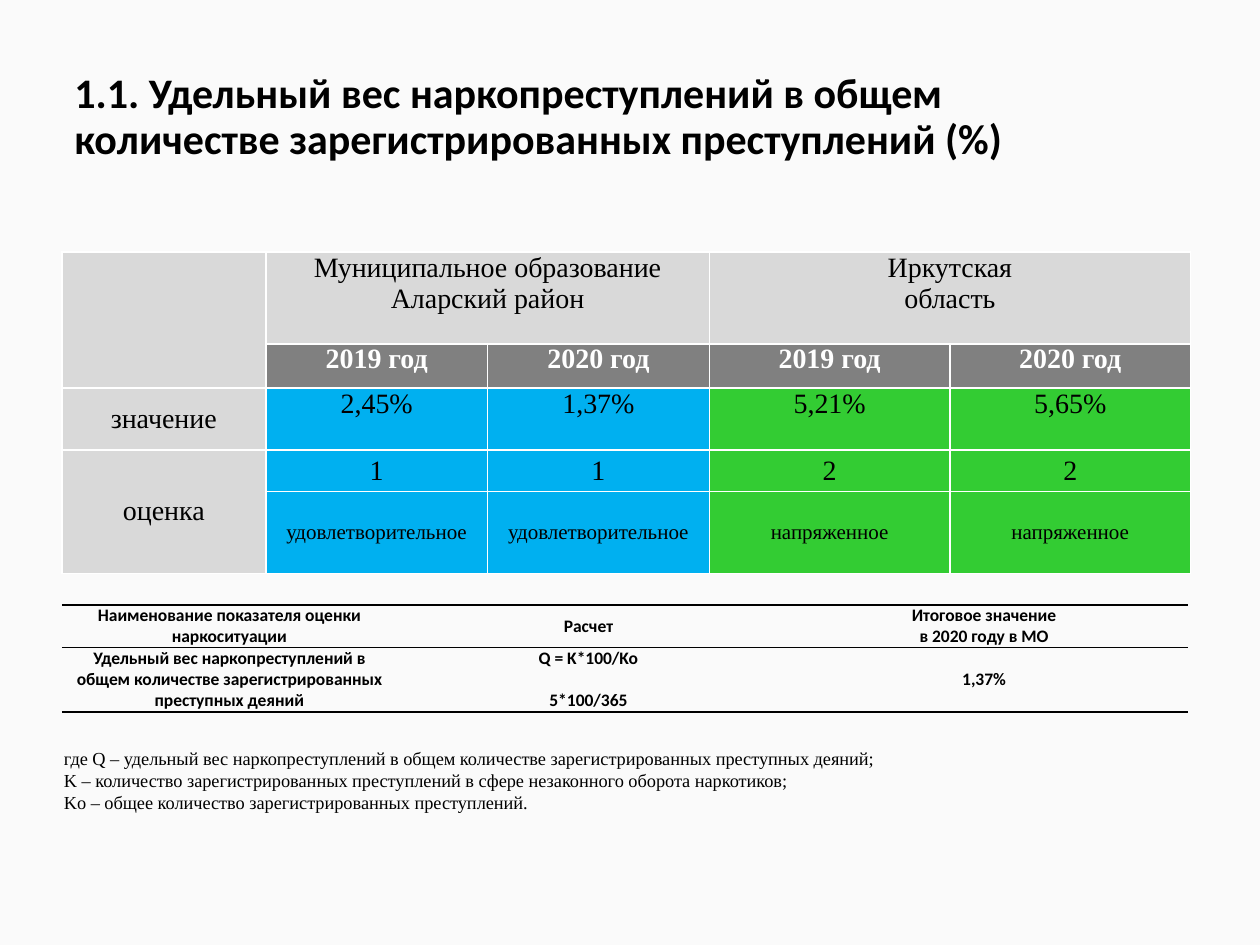
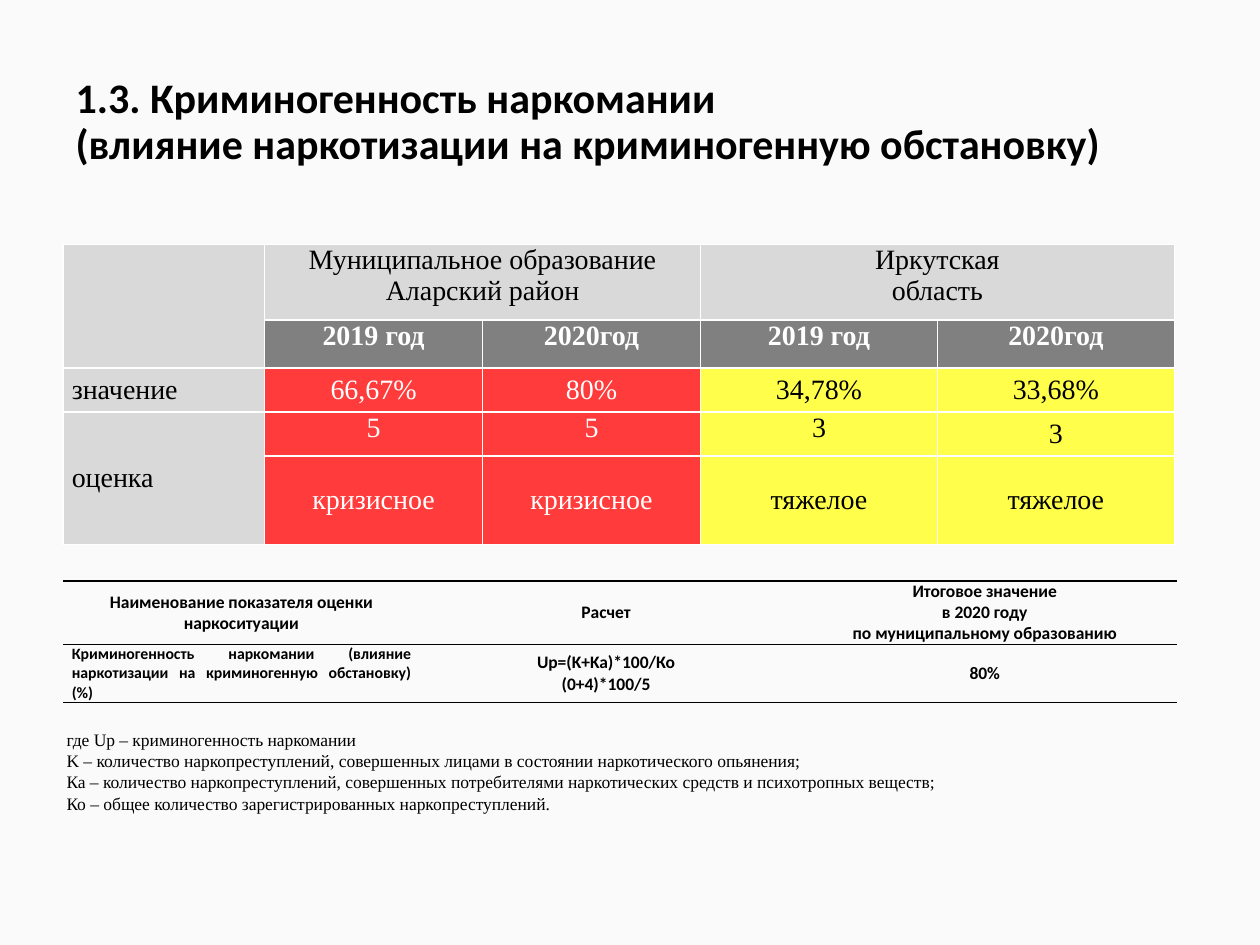
"""Build two slides that rate drug-crime indicators for a district and its region."""
from dataclasses import dataclass
from typing import NamedTuple

from lxml import etree
from pptx import Presentation
from pptx.dml.color import RGBColor
from pptx.enum.text import MSO_ANCHOR, MSO_AUTO_SIZE, PP_ALIGN
from pptx.oxml.ns import qn
from pptx.util import Inches, Pt

TOP, MIDDLE = MSO_ANCHOR.TOP, MSO_ANCHOR.MIDDLE
LEFT, CENTER, JUSTIFY = PP_ALIGN.LEFT, PP_ALIGN.CENTER, PP_ALIGN.JUSTIFY
NO_AUTOFIT = MSO_AUTO_SIZE.NONE
TITLE_ONLY = 5


@dataclass(frozen=True)
class Theme:
    """Shared colours, fonts and type sizes."""

    background: RGBColor = RGBColor(0xFA, 0xFA, 0xFA)
    black: RGBColor = RGBColor(0, 0, 0)
    white: RGBColor = RGBColor(0xFF, 0xFF, 0xFF)
    label: RGBColor = RGBColor(0xD9, 0xD9, 0xD9)
    year: RGBColor = RGBColor(0x80, 0x80, 0x80)
    satisfactory: RGBColor = RGBColor(0x00, 0xB0, 0xF0)
    tense: RGBColor = RGBColor(0x33, 0xCC, 0x33)
    severe: RGBColor = RGBColor(0xFF, 0xFF, 0x4B)
    crisis: RGBColor = RGBColor(0xFF, 0x3B, 0x3B)
    sans: str = "Calibri"
    serif: str = "Times New Roman"
    title_size: float = 24
    rating_size: float = 16
    formula_size: float = 10
    border: float = 1


THEME = Theme()


class Box(NamedTuple):
    """Position and size in inches."""

    left: float
    top: float
    width: float
    height: float


class TextStyle(NamedTuple):
    """Look of a piece of text."""

    font: str
    size: float
    color: RGBColor = THEME.black
    bold: bool = False
    align: PP_ALIGN = CENTER


@dataclass(frozen=True)
class Territory:
    """Two years of ratings for one territory."""

    name: str
    values: tuple[str, str]
    score: str
    level: str
    fill: RGBColor
    color: RGBColor = THEME.black


@dataclass(frozen=True)
class RatingTable:
    """Ratings of the district and the region by year."""

    box: Box
    columns: tuple[float, ...]
    rows: tuple[float, ...]
    years: tuple[str, str]
    territories: tuple[Territory, Territory]
    level_size: float
    label_align: PP_ALIGN
    top_cells: frozenset[tuple[int, int]]


@dataclass(frozen=True)
class FormulaTable:
    """Calculation of one indicator."""

    box: Box
    columns: tuple[float, ...]
    rows: tuple[float, ...]
    cells: tuple[tuple[str, ...], tuple[str, ...]]
    name_style: TextStyle
    formula_gap: float = 0


@dataclass(frozen=True)
class Indicator:
    """Content of one slide."""

    title: str
    title_box: Box
    title_bottom: float
    rating: RatingTable
    formula: FormulaTable
    legend: str
    legend_box: Box
    legend_indent: float
    legend_size: float


TITLE_STYLE = TextStyle(THEME.sans, THEME.title_size, bold=True, align=LEFT)
RATING_STYLE = TextStyle(THEME.serif, THEME.rating_size)
YEAR_STYLE = RATING_STYLE._replace(color=THEME.white, bold=True)
FORMULA_STYLE = TextStyle(THEME.sans, THEME.formula_size, bold=True)
DISTRICT = "Муниципальное образование Аларский район"
REGION = "Иркутская\nобласть"
INDICATOR_HEADING = "Наименование показателя оценки наркоситуации"

INDICATORS = (
    Indicator(
        title="1.1. Удельный вес наркопреступлений в общем\v"
              "количестве зарегистрированных преступлений (%)",
        title_box=Box(0.49, 0.4, 8.82, 1.45),
        title_bottom=0.43,
        rating=RatingTable(
            Box(0.49, 2, 8.95, 2.55), (1.62, 1.76, 1.76, 1.91, 1.91),
            (0.73, 0.35, 0.49, 0.33, 0.65), ("2019 год", "2020 год"),
            (Territory(DISTRICT, ("2,45%", "1,37%"), "1", "удовлетворительное",
                       THEME.satisfactory),
             Territory(REGION, ("5,21%", "5,65%"), "2", "напряженное", THEME.tense)),
            level_size=12, label_align=CENTER,
            top_cells=frozenset((2, column) for column in range(1, 5))),
        formula=FormulaTable(
            Box(0.49, 4.8, 8.95, 0.85), (2.66, 3.04, 3.24), (0.34, 0.51),
            ((INDICATOR_HEADING, "Расчет", "Итоговое значение\nв 2020 году в МО"),
             ("Удельный вес наркопреступлений в общем количестве "
              "зарегистрированных преступных деяний",
              "Q = K*100/Ko\n5*100/365", "1,37%")),
            FORMULA_STYLE, formula_gap=12),
        legend="где Q – удельный вес наркопреступлений в общем количестве "
               "зарегистрированных преступных деяний;\n"
               "K – количество зарегистрированных преступлений в сфере "
               "незаконного оборота наркотиков;\n"
               "Ko – общее количество зарегистрированных преступлений.",
        legend_box=Box(0.11, 5.88, 9.33, 0.63), legend_indent=0.3, legend_size=10.5),
    Indicator(
        title="1.3. Криминогенность наркомании\v"
              "(влияние наркотизации на криминогенную обстановку)",
        title_box=Box(0.5, 0.58, 8.62, 0.79),
        title_bottom=0.05,
        rating=RatingTable(
            Box(0.5, 1.94, 8.83, 2.38), (1.6, 1.73, 1.73, 1.88, 1.88),
            (0.6, 0.38, 0.35, 0.35, 0.7), ("2019 год", "2020год"),
            (Territory(DISTRICT, ("66,67%", "80%"), "5", "кризисное",
                       THEME.crisis, THEME.white),
             Territory(REGION, ("34,78%", "33,68%"), "3", "тяжелое", THEME.severe)),
            level_size=16, label_align=LEFT,
            top_cells=frozenset((3, column) for column in range(1, 4))),
        formula=FormulaTable(
            Box(0.5, 4.61, 8.83, 0.96), (2.83, 2.96, 3.05), (0.5, 0.46),
            ((INDICATOR_HEADING, "Расчет",
              "Итоговое значение\nв 2020 году\nпо муниципальному образованию"),
             ("Криминогенность наркомании (влияние наркотизации на "
              "криминогенную обстановку) (%)",
              "Up=(K+Ka)*100/Ко\n(0+4)*100/5", "80%")),
            FORMULA_STYLE._replace(size=9, align=JUSTIFY)),
        legend="где Up – криминогенность наркомании\n"
               "K – количество наркопреступлений, совершенных лицами в состоянии "
               "наркотического опьянения;\n"
               "Ка – количество наркопреступлений, совершенных потребителями "
               "наркотических средств и психотропных веществ;\n"
               "Ко – общее количество зарегистрированных наркопреступлений.",
        legend_box=Box(0.23, 5.74, 9.1, 0.77), legend_indent=0.2, legend_size=10),
)


def write_text(text_frame, text: str, style: TextStyle) -> None:
    """Fill a text frame and format its runs."""
    text_frame.text = text
    for paragraph in text_frame.paragraphs:
        paragraph.alignment = style.align
        for run in paragraph.runs:
            run.font.name = style.font
            run.font.size = Pt(style.size)
            run.font.bold = style.bold
            run.font.color.rgb = style.color


def set_borders(cell, colors: dict[str, RGBColor | None]) -> None:
    """Set the cell's border lines, with None for no line."""
    properties = cell._tc.get_or_add_tcPr()
    for position, (tag, color) in enumerate(colors.items()):
        line = etree.Element(qn(f"a:{tag}"), w=str(Pt(THEME.border)))
        if color is None:
            etree.SubElement(line, qn("a:noFill"))
        else:
            fill = etree.SubElement(line, qn("a:solidFill"))
            etree.SubElement(fill, qn("a:srgbClr"), val=str(color))
        properties.insert(position, line)


def add_plain_table(slide, box: Box, columns: tuple[float, ...],
                    rows: tuple[float, ...], side: RGBColor | None, edge: RGBColor):
    """Add an unfilled table with given side and horizontal border colours."""
    table = slide.shapes.add_table(len(rows), len(columns), *map(Inches, box)).table
    table.first_row = table.horz_banding = False
    for column, width in zip(table.columns, columns):
        column.width = Inches(width)
    for row, height in zip(table.rows, rows):
        row.height = Inches(height)
    for cell in table.iter_cells():
        cell.margin_left = cell.margin_right = Inches(0.07)
        cell.margin_top = cell.margin_bottom = 0
        cell.vertical_anchor = MIDDLE
        cell.fill.background()
        set_borders(cell, {"lnL": side, "lnR": side, "lnT": edge, "lnB": edge})
    return table


def fill_cell(cell, text: str, style: TextStyle, fill: RGBColor,
              anchor: MSO_ANCHOR = MIDDLE) -> None:
    """Write into a coloured table cell."""
    cell.fill.solid()
    cell.fill.fore_color.rgb = fill
    cell.vertical_anchor = anchor
    write_text(cell.text_frame, text, style)


def add_rating_table(slide, rating: RatingTable) -> None:
    """Draw the ratings by territory and year."""
    table = add_plain_table(slide, rating.box, rating.columns, rating.rows,
                            THEME.white, THEME.white)
    label_style = RATING_STYLE._replace(align=rating.label_align)
    for row, label in ((0, ""), (2, "значение"), (3, "оценка")):
        fill_cell(table.cell(row, 0), label, label_style, THEME.label)
    for first_row in (0, 3):
        table.cell(first_row, 0).merge(table.cell(first_row + 1, 0))
    for index, territory in enumerate(rating.territories):
        first = 1 + 2 * index
        heading = table.cell(0, first)
        heading.merge(table.cell(0, first + 1))
        fill_cell(heading, territory.name, RATING_STYLE, THEME.label, TOP)
        style = RATING_STYLE._replace(color=territory.color)
        level_style = style._replace(size=rating.level_size)
        for column, year, value in zip((first, first + 1), rating.years, territory.values):
            fill_cell(table.cell(1, column), year, YEAR_STYLE, THEME.year, TOP)
            entries = ((value, style), (territory.score, style),
                       (territory.level, level_style))
            for row, (text, entry_style) in enumerate(entries, start=2):
                anchor = TOP if (row, column) in rating.top_cells else MIDDLE
                fill_cell(table.cell(row, column), text, entry_style,
                          territory.fill, anchor)


def add_formula_table(slide, formula: FormulaTable) -> None:
    """Draw the calculation of the indicator."""
    table = add_plain_table(slide, formula.box, formula.columns, formula.rows,
                            None, THEME.black)
    for row, texts in enumerate(formula.cells):
        for column, text in enumerate(texts):
            style = formula.name_style if (row, column) == (1, 0) else FORMULA_STYLE
            write_text(table.cell(row, column).text_frame, text, style)
    table.cell(1, 1).text_frame.paragraphs[1].space_before = Pt(formula.formula_gap)


def add_title(slide, indicator: Indicator) -> None:
    """Place and format the title."""
    title = slide.shapes.title
    title.left, title.top, title.width, title.height = map(Inches, indicator.title_box)
    text_frame = title.text_frame
    write_text(text_frame, indicator.title, TITLE_STYLE)
    text_frame.auto_size = NO_AUTOFIT
    text_frame.vertical_anchor = MIDDLE
    text_frame.margin_bottom = Inches(indicator.title_bottom)
    text_frame.paragraphs[0].line_spacing = 0.9


def add_legend(slide, indicator: Indicator) -> None:
    """Explain the symbols of the formula."""
    text_frame = slide.shapes.add_textbox(*map(Inches, indicator.legend_box)).text_frame
    text_frame.word_wrap = True
    style = TextStyle(THEME.serif, indicator.legend_size, align=JUSTIFY)
    write_text(text_frame, indicator.legend, style)
    for paragraph in text_frame.paragraphs:
        paragraph._p.get_or_add_pPr().set("indent", str(Inches(indicator.legend_indent)))


def main() -> None:
    """Build and save the presentation."""
    presentation = Presentation()
    presentation.slide_width, presentation.slide_height = Inches(10), Inches(7.5)
    background = presentation.slide_master.background.fill
    background.solid()
    background.fore_color.rgb = THEME.background
    for indicator in INDICATORS:
        slide = presentation.slides.add_slide(presentation.slide_layouts[TITLE_ONLY])
        add_title(slide, indicator)
        add_rating_table(slide, indicator.rating)
        add_formula_table(slide, indicator.formula)
        add_legend(slide, indicator)
    presentation.save("out.pptx")


if __name__ == "__main__":
    main()
